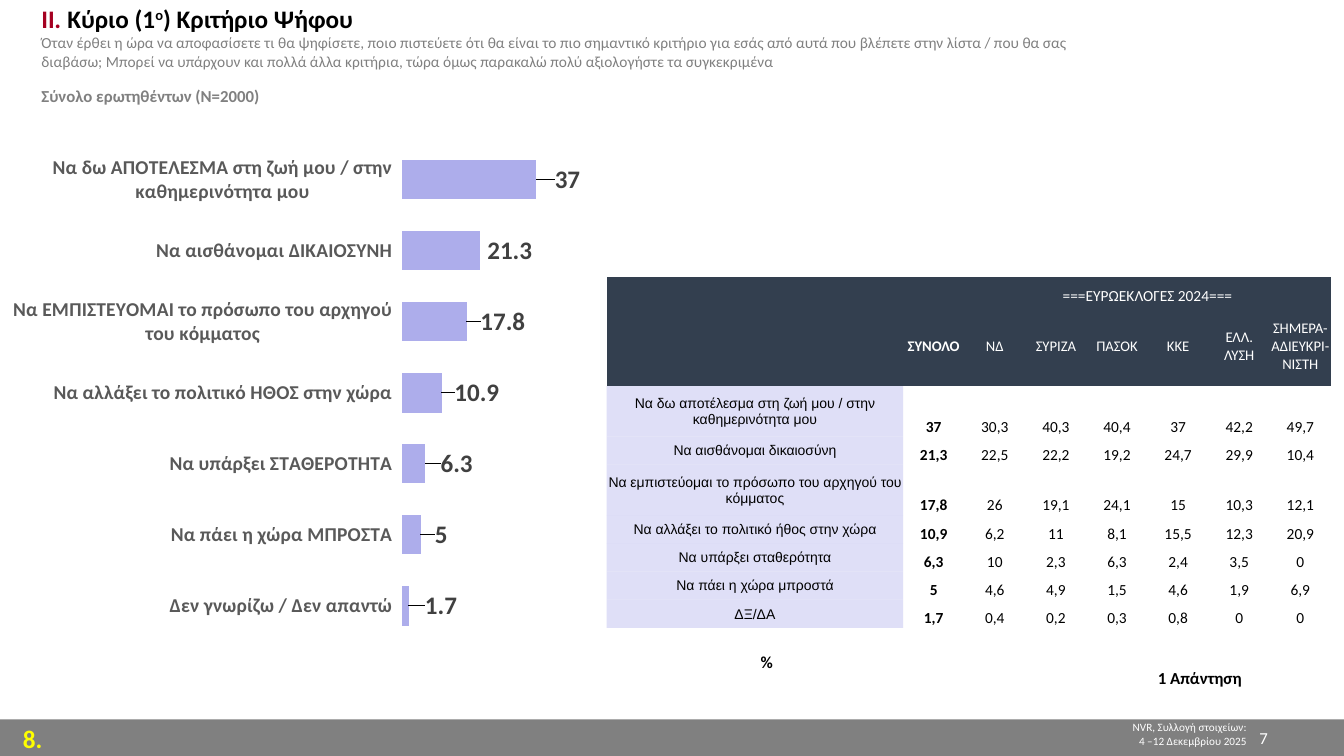
from lxml import etree
from pptx import Presentation
from pptx import util as u
from pptx.chart import data as cd
from pptx.dml import color
from pptx.enum import chart as ch, shapes, text
from pptx.oxml.ns import qn

LEFT, MID, RIGHT = text.PP_ALIGN.LEFT, text.PP_ALIGN.CENTER, text.PP_ALIGN.RIGHT
FONT = "Calibri"
WHITE, BLACK, GREY, RED = "FFFFFF", "000000", "808080", "A50021"
NAVY, LILAC, PALE = "333F4F", "ADADEB", "D2D2F4"
PLAIN = "{2D5ABB26-0587-4C30-8999-92F81FD0307C}"


def paint(target, tint):
    target.rgb = color.RGBColor.from_string(tint)


def style(font, size, tint, bold=False, face=FONT):
    font.size, font.bold, font.name = u.Pt(size), bold, face
    paint(font.color, tint)


class Page:
    def __init__(self, deck):
        self.slide = deck.slides.add_slide(deck.slide_layouts[5])
        self.items = self.slide.shapes

    def box(self, *spots):
        return [u.Cm(s) for s in spots]

    def run(self, para, words, size, tint, bold=False, face=FONT):
        run = para.add_run()
        run.text = words
        style(run.font, size, tint, bold, face)
        return run

    def bar(self, spots, tint):
        bar = self.items.add_shape(shapes.MSO_SHAPE.RECTANGLE, *self.box(*spots))
        bar.shadow.inherit = False
        bar.fill.solid()
        paint(bar.fill.fore_color, tint)
        bar.line.fill.background()

    def note(self, spots, lines, size, tint, bold=False, align=LEFT, wrap=True):
        frame = self.items.add_textbox(*self.box(*spots)).text_frame
        frame.word_wrap = wrap
        for i, line in enumerate(lines):
            para = frame.add_paragraph() if i else frame.paragraphs[0]
            para.alignment = align
            self.run(para, line, size, tint, bold)

    def title(self, spots, head, query, base):
        title = self.items.title
        title.left, title.top, title.width, title.height = self.box(*spots)
        frame = title.text_frame
        frame.word_wrap = True
        frame.auto_size = text.MSO_AUTO_SIZE.NONE
        frame.vertical_anchor = text.MSO_ANCHOR.MIDDLE
        paras = [frame.paragraphs[0], frame.add_paragraph(), frame.add_paragraph()]
        for para in paras:
            para.alignment = LEFT
        paras[0].line_spacing = 1.3
        paras[2].space_before = u.Pt(11)
        for words, tint, slant, lift in head:
            run = self.run(paras[0], words, 18, tint, True)
            run.font.italic = slant
            if lift:
                run._r.get_or_add_rPr().set("baseline", str(lift * 1000))
        self.run(paras[1], query, 11, GREY)
        self.run(paras[2], base, 12, GREY, True)

    def chart(self, spots, names, vals, shifts):
        data = cd.CategoryChartData()
        data.categories = names
        data.add_series("Series 1", vals)
        kind = ch.XL_CHART_TYPE.BAR_CLUSTERED
        chart = self.items.add_chart(kind, *self.box(*spots), data).chart
        chart.has_legend = chart.has_title = False
        style(chart.font, 10, BLACK, face="Karla")
        cat, val = chart.category_axis, chart.value_axis
        cat.reverse_order = True
        cat.tick_label_position = ch.XL_TICK_LABEL_POSITION.LOW
        cat.major_tick_mark = cat.minor_tick_mark = ch.XL_TICK_MARK.NONE
        cat.format.line.fill.background()
        style(cat.tick_labels.font, 14, "595959", True)
        val.minimum_scale, val.maximum_scale, val.major_unit = 0, 100, 50
        val.has_major_gridlines = val.visible = False
        plot = chart.plots[0]
        plot.gap_width, plot.vary_by_categories = 80, False
        row = plot.series[0]
        row.format.fill.solid()
        paint(row.format.fill.fore_color, LILAC)
        row.data_labels.show_value = True
        style(row.data_labels.font, 18, "404040", True)
        for i, shift in enumerate(shifts):
            label = row.points[i].data_label
            style(label.font, 18, "404040", True)
            label.position = ch.XL_LABEL_POSITION.OUTSIDE_END
        root = chart._chartSpace
        for node, shift in zip(root.xpath(".//c:dLbl"), shifts):
            node.insert(1, self.place(x=shift, y=0))
        area = root.xpath(".//c:plotArea")[0]
        for old in area.findall(qn("c:layout")):
            area.remove(old)
        area.insert(0, self.place("inner", x=0.4, y=0.027, w=0.378, h=0.876))

    def place(self, target=None, **parts):
        node = etree.Element(qn("c:layout"))
        man = etree.SubElement(node, qn("c:manualLayout"))
        if target:
            etree.SubElement(man, qn("c:layoutTarget"), val=target)
            for axis in "xy":
                etree.SubElement(man, qn(f"c:{axis}Mode"), val="edge")
        for key, num in parts.items():
            etree.SubElement(man, qn(f"c:{key}"), val=str(num))
        return node

    def cell(self, cell, words, size, tint, bold, face, low, fill, clear=None):
        cell.margin_left = cell.margin_right = cell.margin_top = u.Cm(0.03)
        cell.margin_bottom = 0
        anchor = text.MSO_ANCHOR
        cell.vertical_anchor = anchor.BOTTOM if low else anchor.MIDDLE
        para = cell.text_frame.paragraphs[0]
        para.alignment = MID
        if words:
            self.run(para, words, size, tint, bold, face)
        else:
            etree.SubElement(para._p, qn("a:endParaRPr"), sz="1000")
        if not fill:
            cell.fill.background()
            return
        cell.fill.solid()
        paint(cell.fill.fore_color, fill)
        if clear:
            hue = cell._tc.xpath(".//a:tcPr/a:solidFill/a:srgbClr")[0]
            etree.SubElement(hue, qn("a:alpha"), val=str(clear * 1000))

    def table(self, spots, wide, high, top, heads, rows):
        frame = self.items.add_table(len(high), len(wide), *self.box(*spots))
        table = frame.table
        table.first_row = table.horz_banding = False
        table._tbl.xpath(".//a:tableStyleId")[0].text = PLAIN
        for col, size in zip(table.columns, wide):
            col.width = u.Cm(size)
        for row, size in zip(table.rows, high):
            row.height = u.Cm(size)
        for c, (upper, lower) in enumerate(zip(["", "", top] + [""] * 5, heads)):
            self.cell(table.cell(0, c), upper, 11, WHITE, False, FONT, True, NAVY)
            self.cell(table.cell(1, c), lower, 10.5, WHITE, c == 1, FONT, False, NAVY)
        table.cell(0, 2).merge(table.cell(0, 7))
        for r, (name, nums) in enumerate(rows, 2):
            self.cell(table.cell(r, 0), name, 10, BLACK, False, "Arial", False, PALE, 70)
            for c, num in enumerate(nums.split(), 1):
                self.cell(table.cell(r, c), num, 11, BLACK, c == 1, FONT, True, None)


HEAD = [("ΙΙ", RED, False, 0), (". ", RED, True, 0), ("Κύριο (1", BLACK, False, 0),
        ("ο", BLACK, False, 30), (") Κριτήριο Ψήφου", BLACK, False, 0)]
QUERY = ("Όταν έρθει η ώρα να αποφασίσετε τι θα ψηφίσετε, ποιο πιστεύετε ότι θα είναι "
         "το πιο σημαντικό κριτήριο για εσάς από αυτά που βλέπετε στην λίστα / που θα σας "
         "διαβάσω; Μπορεί να υπάρχουν και πολλά άλλα κριτήρια, τώρα όμως παρακαλώ πολύ "
         "αξιολογήστε τα συγκεκριμένα")
BARS = [
    ("Να δω ΑΠΟΤΕΛΕΣΜΑ στη ζωή μου / στην καθημερινότητα μου", 37, 0.015),
    ("Να αισθάνομαι ΔΙΚΑΙΟΣΥΝΗ", 21.3, 0.004),
    ("Να ΕΜΠΙΣΤΕΥΟΜΑΙ το πρόσωπο του αρχηγού του κόμματος", 17.8, 0.01),
    ("Να αλλάξει το πολιτικό ΗΘΟΣ στην χώρα", 10.9, 0.009),
    ("Να υπάρξει ΣΤΑΘΕΡΟΤΗΤΑ", 6.3, 0.012),
    ("Να πάει η χώρα ΜΠΡΟΣΤΑ", 5, 0.011),
    ("Δεν γνωρίζω / Δεν απαντώ", 1.7, 0.013),
]
HEADS = ["", "ΣΥΝΟΛΟ", "ΝΔ", "ΣΥΡΙΖΑ", "ΠΑΣΟΚ", "ΚΚΕ", "ΕΛΛ. ΛΥΣΗ", "ΣΗΜΕΡΑ-ΑΔΙΕΥΚΡΙ-ΝΙΣΤΗ"]
ROWS = [
    ("Να δω αποτέλεσμα στη ζωή μου / στην καθημερινότητα μου",
     "37 30,3 40,3 40,4 37 42,2 49,7"),
    ("Να αισθάνομαι δικαιοσύνη", "21,3 22,5 22,2 19,2 24,7 29,9 10,4"),
    ("Να εμπιστεύομαι το πρόσωπο του αρχηγού του κόμματος",
     "17,8 26 19,1 24,1 15 10,3 12,1"),
    ("Να αλλάξει το πολιτικό ήθος στην χώρα", "10,9 6,2 11 8,1 15,5 12,3 20,9"),
    ("Να υπάρξει σταθερότητα", "6,3 10 2,3 6,3 2,4 3,5 0"),
    ("Να πάει η χώρα μπροστά", "5 4,6 4,9 1,5 4,6 1,9 6,9"),
    ("ΔΞ/ΔΑ", "1,7 0,4 0,2 0,3 0,8 0 0"),
]


def main():
    deck = Presentation()
    deck.slide_width, deck.slide_height = u.Cm(33.87), u.Cm(19.05)
    page = Page(deck)
    page.bar((0, 18.13, 33.87, 0.94), GREY)
    page.note((24.33, 18.03, 7.34, 0.94),
              ["NVR, Συλλογή στοιχείων:", "4 –12 Δεκεμβρίου 2025"], 8, WHITE, align=RIGHT)
    page.note((0.33, 18.11, 1.7, 1.02), ["8."], 18, "FFFF00", True)
    page.note((26.92, 18.21, 5.28, 1.27), ["7"], 12, WHITE, align=RIGHT)
    page.note((18.92, 16.31, 0.81, 0.76), ["%"], 12, BLACK, True, wrap=False)
    page.title((0.79, -0.35, 27.56, 3.23), HEAD, QUERY, "Σύνολο ερωτηθέντων (Ν=2000)")
    page.note((28.93, 16.69, 2.74, 0.76), ["1 Απάντηση"], 12, BLACK, True, wrap=False)
    page.chart((0.33, 3.25, 24.31, 14.3), *zip(*BARS))
    page.table((15.29, 6.99, 18.25, 8.83), [7.47] + [1.54] * 7,
               [0.71, 2.03, 1.27, 0.71, 1.27] + [0.71] * 4,
               "===ΕΥΡΩΕΚΛΟΓΕΣ 2024===", HEADS, ROWS)
    deck.save("out.pptx")


if __name__ == "__main__":
    main()
